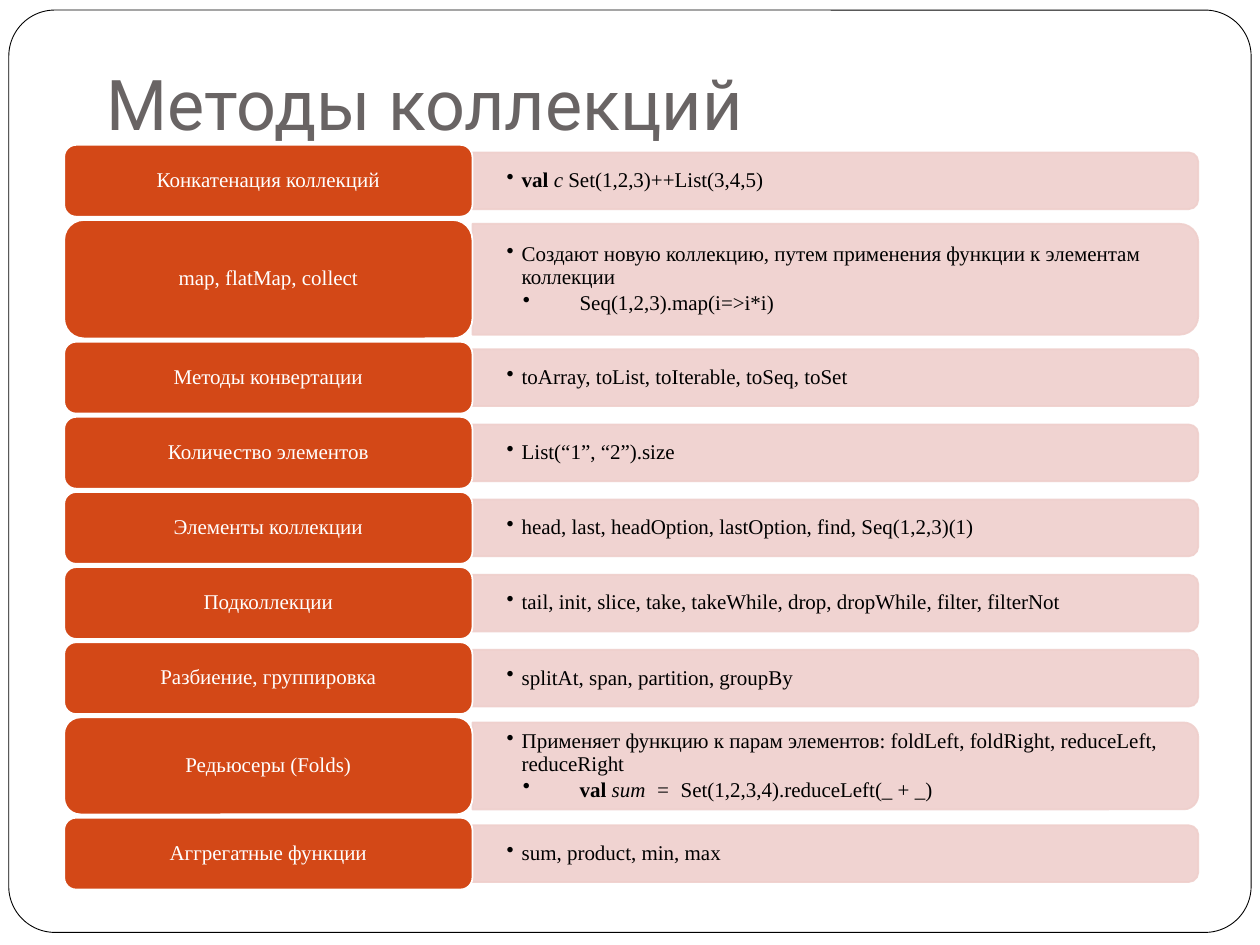
import pptx
import pptx.dml.color
import pptx.enum.shapes
import pptx.enum.text
import pptx.oxml.ns
import pptx.util
from lxml import etree

Inches, Pt = pptx.util.Inches, pptx.util.Pt
RGBColor = pptx.dml.color.RGBColor
SHAPE = pptx.enum.shapes.MSO_SHAPE
ANCHOR = pptx.enum.text.MSO_ANCHOR
ALIGN = pptx.enum.text.PP_ALIGN
qn = pptx.oxml.ns.qn

BLACK = RGBColor(0x00, 0x00, 0x00)
WHITE = RGBColor(0xFF, 0xFF, 0xFF)
GREY = RGBColor(0x69, 0x64, 0x64)
ORANGE = RGBColor(0xD3, 0x48, 0x17)
PINK = RGBColor(0xEF, 0xCF, 0xCC)
BODY_FONT = "Times New Roman"

TITLE = "Методы коллекций"
# Label, then bullets; each bullet is a list of (text, style), style "b", "i" or "".
ROWS = [
    ("Конкатенация коллекций",
     [[("val ", "b"), ("c ", "i"), ("Set(1,2,3)++List(3,4,5)", "")]]),
    ("map, flatMap, collect",
     [[("Создают новую коллекцию, путем применения функции к элементам коллекции", "")],
      [("\tSeq(1,2,3).map(i=>i*i)", "")]]),
    ("Методы конвертации", [[("toArray, toList, toIterable, toSeq, toSet", "")]]),
    ("Количество элементов", [[("List(“1”, “2”).size", "")]]),
    ("Элементы коллекции",
     [[("head, last, headOption, lastOption, find, Seq(1,2,3)(1)", "")]]),
    ("Подколлекции",
     [[("tail, init, slice, take, takeWhile, drop, dropWhile, filter, filterNot", "")]]),
    ("Разбиение, группировка", [[("splitAt, span, partition, groupBy", "")]]),
    ("Редьюсеры (Folds)",
     [[("Применяет функцию к парам элементов: foldLeft, foldRight, reduceLeft, reduceRight", "")],
      [("\tval ", "b"), ("sum  =  ", "i"), ("Set(1,2,3,4).reduceLeft(_ + _)", "")]]),
    ("Аггрегатные функции", [[("sum, product, min, max", "")]]),
]
ROW_SIZE = (0.57, 0.45)  # label height, panel height
TALL_ROWS = {1: (0.94, 0.88), 7: (0.77, 0.69)}
TOP, BOTTOM = 1.15, 7.06
LABEL_LEFT, LABEL_W = 0.51, 3.24
PANEL_LEFT, PANEL_W = LABEL_LEFT + LABEL_W, 5.76
BULLET_INDENTS = (0.12, 0.25)


def add_box(kind, left, top, width, height, fill, line, line_width):
    sp = slide.shapes.add_shape(kind, Inches(left), Inches(top), Inches(width), Inches(height))
    sp.shadow.inherit = False
    sp.fill.solid()
    sp.fill.fore_color.rgb = fill
    sp.line.color.rgb = line
    sp.line.width = Pt(line_width)
    return sp


def set_frame(tf, anchor, left, top, right, bottom):
    tf.word_wrap = True
    tf.vertical_anchor = anchor
    tf.margin_left, tf.margin_top = Inches(left), Inches(top)
    tf.margin_right, tf.margin_bottom = Inches(right), Inches(bottom)


def style_run(r, font, size, color):
    r.font.name = font
    r.font.size = Pt(size)
    r.font.color.rgb = color


def add_label(text, top, height):
    sp = add_box(SHAPE.ROUNDED_RECTANGLE, LABEL_LEFT, top, LABEL_W, height, ORANGE, WHITE, 1)
    tf = sp.text_frame
    set_frame(tf, ANCHOR.MIDDLE, 0.05, 0.03, 0.05, 0.03)
    p = tf.paragraphs[0]
    p.text = text
    p.alignment = ALIGN.CENTER
    p.line_spacing = 0.9
    style_run(p.runs[0], BODY_FONT, 12, WHITE)


def add_panel(center, height):
    """Rounds the right-hand corners by turning a top-rounded rectangle 90 degrees."""
    sp = add_box(SHAPE.ROUND_2_SAME_RECTANGLE, PANEL_LEFT + (PANEL_W - height) / 2,
                 center - PANEL_W / 2, height, PANEL_W, PINK, PINK, 1)
    sp.rotation = 90
    for color in sp._element.spPr.iter(qn("a:srgbClr")):
        etree.SubElement(color, qn("a:alpha"), val="90000")


def add_bullets(bullets, center, height):
    s = slide.shapes.add_textbox(Inches(PANEL_LEFT), Inches(center - height / 2),
                                 Inches(PANEL_W - 0.04), Inches(height))
    tf = s.text_frame
    set_frame(tf, ANCHOR.MIDDLE, 0.27, 0.14, 0.27, 0.14)
    for i, parts in enumerate(bullets):
        p = tf.add_paragraph() if i else tf.paragraphs[0]
        p.level = i + 1
        p.line_spacing = 0.9
        p.space_after = Pt(1.8)
        pPr = p._p.get_or_add_pPr()
        pPr.set("marL", str(Inches(BULLET_INDENTS[i])))
        pPr.set("indent", str(-Inches(BULLET_INDENTS[0])))
        pPr.set("defTabSz", str(Inches(0.58)))
        etree.SubElement(pPr, qn("a:buChar"), char="•")
        for text, style in parts:
            r = p.add_run()
            r.text = text
            style_run(r, BODY_FONT, 12, BLACK)
            r.font.bold = style == "b"
            r.font.italic = style == "i"


prs = pptx.Presentation()
prs.slide_width, prs.slide_height = Inches(10), Inches(7.5)
slide = prs.slides.add_slide(prs.slide_layouts[6])

frame = add_box(SHAPE.ROUNDED_RECTANGLE, 0.07, 0.08, 9.86, 7.32, WHITE, BLACK, 0.5)
frame.adjustments[0] = 0.05

title = slide.shapes.add_textbox(Inches(0.75), Inches(0), Inches(8.5), Inches(1.25))
set_frame(title.text_frame, ANCHOR.BOTTOM, 0.1, 0.05, 0.1, 0.1)
title.text_frame.text = TITLE
style_run(title.text_frame.paragraphs[0].runs[0], "Roboto", 40, GREY)

sizes = [TALL_ROWS.get(i, ROW_SIZE) for i in range(len(ROWS))]
gap = (BOTTOM - TOP - sum(label_h for label_h, _ in sizes)) / (len(ROWS) - 1)
top = TOP
for (label, bullets), (label_h, panel_h) in zip(ROWS, sizes):
    center = top + label_h / 2
    add_panel(center, panel_h)
    add_bullets(bullets, center, panel_h)
    add_label(label, top, label_h)
    top += label_h + gap

prs.save("out.pptx")
